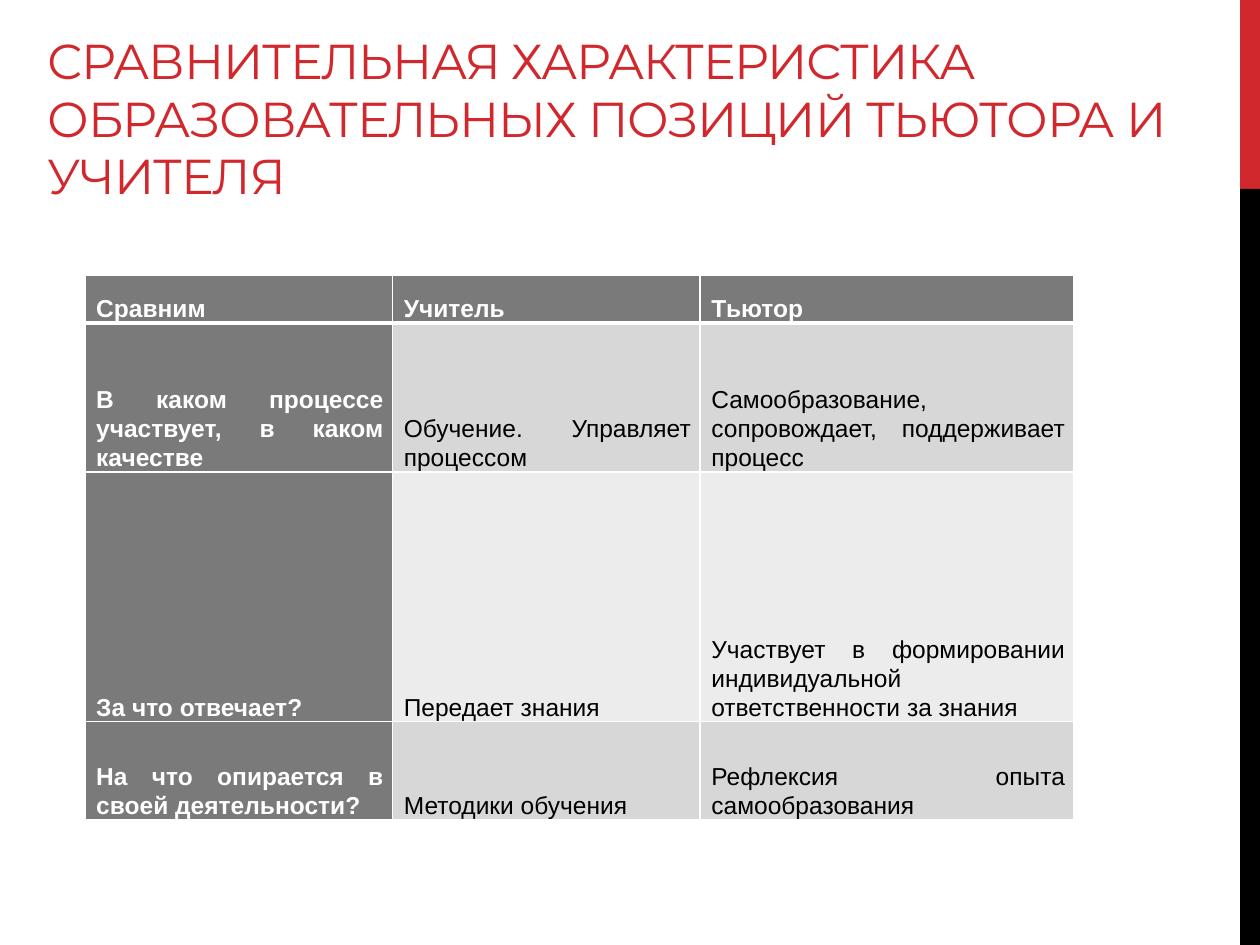
from lxml import etree
from pptx import Presentation
from pptx.dml.color import RGBColor
from pptx.enum.shapes import MSO_SHAPE
from pptx.enum.text import MSO_ANCHOR, PP_ALIGN
from pptx.oxml.ns import qn
from pptx.util import Cm, Pt

RECT = MSO_SHAPE.RECTANGLE
BOTTOM = MSO_ANCHOR.BOTTOM
JUSTIFY = PP_ALIGN.JUSTIFY

# Content
TITLE = "СРАВНИТЕЛЬНАЯ ХАРАКТЕРИСТИКА ОБРАЗОВАТЕЛЬНЫХ ПОЗИЦИЙ ТЬЮТОРА И УЧИТЕЛЯ"
ROWS = [
    ("Сравним", "Учитель", "Тьютор"),
    ("В каком процессе участвует, в каком качестве",
     "Обучение. Управляет процессом",
     "Самообразование, сопровождает, поддерживает процесс"),
    ("За что отвечает?",
     "Передает знания",
     "Участвует в формировании индивидуальной ответственности за знания"),
    ("На что опирается в своей деятельности?",
     "Методики обучения",
     "Рефлексия опыта самообразования"),
]
COLORS = {"red": "D1282E", "black": "000000", "white": "FFFFFF",
          "head": "7A7A7A", "odd": "D7D7D7", "even": "ECECEC"}

# Sizes in centimetres
SLIDE_W, SLIDE_H = 25.4, 19.05
BAR_W, BAR_SPLIT = 0.4, 3.81
TABLE_LEFT, TABLE_TOP = 1.71, 5.54
COL_WIDTHS = (6.2, 6.2, 7.54)
ROW_HEIGHTS = (0.97, 3.0, 5.03, 1.98)


def rgb(name):
    return RGBColor.from_string(COLORS[name])


def add_run(p, text, font, size, color, bold=False):
    r = p.add_run()
    r.text = text
    r.font.name, r.font.size, r.font.bold = font, Pt(size), bold
    r.font.color.rgb = rgb(color)
    return r


def add_bar(slide, top, height, color):
    sp = slide.shapes.add_shape(RECT, Cm(SLIDE_W - BAR_W), Cm(top), Cm(BAR_W), Cm(height))
    sp.shadow.inherit = False
    sp.fill.solid()
    sp.fill.fore_color.rgb = rgb(color)
    sp.line.fill.background()


def set_borders(cell, widths):
    """Draw white borders; widths maps a side (L, R, T, B) to points."""
    tc_pr = cell._tc.get_or_add_tcPr()
    for i, (side, width) in enumerate(widths.items()):
        ln = etree.Element(qn(f"a:ln{side}"), w=str(Pt(width)))
        fill = etree.SubElement(ln, qn("a:solidFill"))
        etree.SubElement(fill, qn("a:srgbClr"), val=COLORS["white"])
        tc_pr.insert(i, ln)


def fill_cell(cell, text, row, col):
    is_head = row == 0 or col == 0
    cell.fill.solid()
    cell.fill.fore_color.rgb = rgb("head" if is_head else "odd" if row % 2 else "even")
    cell.vertical_anchor = BOTTOM
    cell.margin_left = cell.margin_right = Cm(0.18)
    cell.margin_top = cell.margin_bottom = 0
    p = cell.text_frame.paragraphs[0]
    p.alignment = JUSTIFY
    p.line_spacing = Pt(16.5)
    p._p.get_or_add_pPr().set("marL", str(Cm(0.05)))
    add_run(p, text, "Arial", 14, "white" if is_head else "black", is_head)
    set_borders(cell, {"L": 1, "R": 1,
                       "T": 3 if row == 1 else 1,
                       "B": 3 if row == 0 else 1})


prs = Presentation()
prs.slide_width, prs.slide_height = Cm(SLIDE_W), Cm(SLIDE_H)
slide = prs.slides.add_slide(prs.slide_layouts[6])

# Side bars
add_bar(slide, 0, BAR_SPLIT, "red")
add_bar(slide, BAR_SPLIT, SLIDE_H - BAR_SPLIT, "black")

# Title
tf = slide.shapes.add_textbox(Cm(0.71), Cm(0.43), Cm(23.6), Cm(3.81)).text_frame
tf.word_wrap = True
tf.vertical_anchor = BOTTOM
tf.margin_bottom = Cm(0.08)
p = tf.paragraphs[0]
p.line_spacing = 0.98
r = add_run(p, TITLE, "Montserrat", 28, "red")
r.font._element.set("spc", "-60")

# Comparison table
table = slide.shapes.add_table(
    len(ROWS), len(COL_WIDTHS), Cm(TABLE_LEFT), Cm(TABLE_TOP),
    Cm(sum(COL_WIDTHS)), Cm(sum(ROW_HEIGHTS))).table
for column, width in zip(table.columns, COL_WIDTHS):
    column.width = Cm(width)
for i, (texts, height) in enumerate(zip(ROWS, ROW_HEIGHTS)):
    table.rows[i].height = Cm(height)
    for j, text in enumerate(texts):
        fill_cell(table.cell(i, j), text, i, j)

prs.save("out.pptx")
